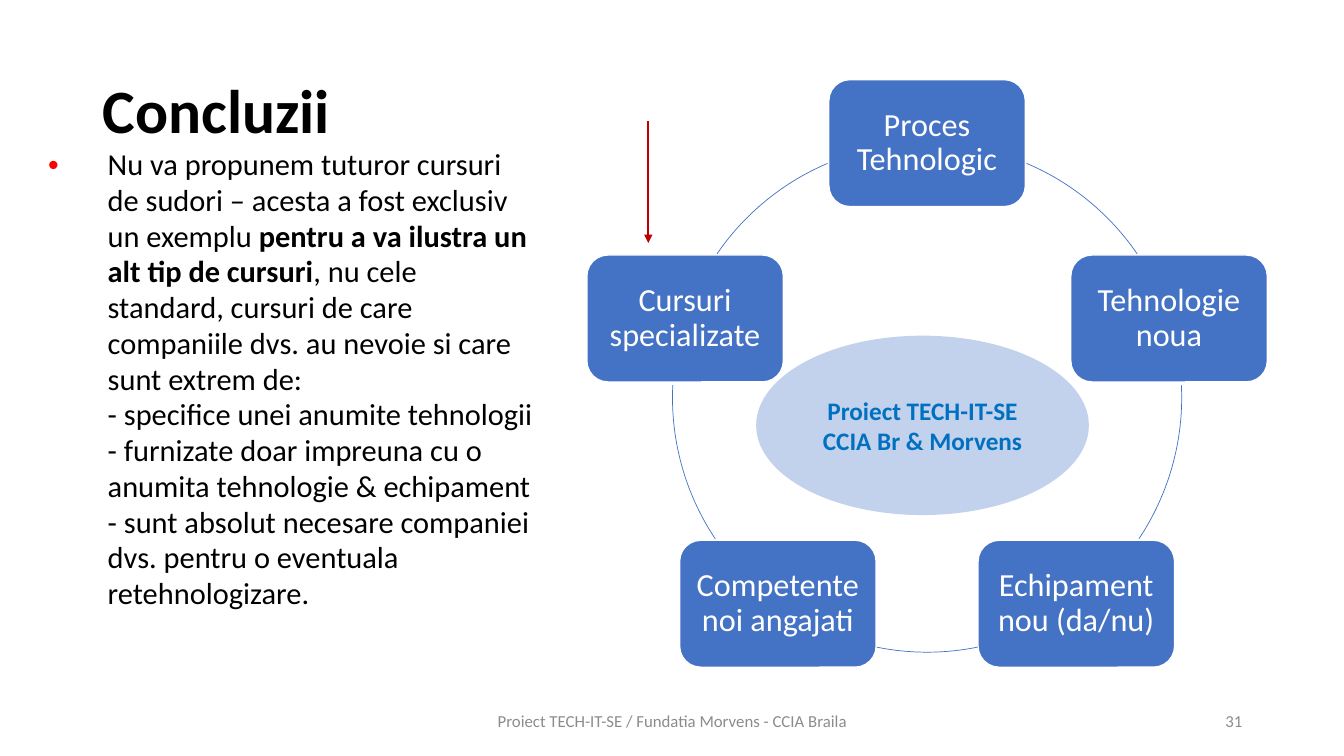
from math import cos, radians, sin

from lxml.etree import SubElement
from pptx import Presentation
from pptx.dml.color import RGBColor
from pptx.enum.shapes import MSO_CONNECTOR, MSO_SHAPE
from pptx.enum.text import MSO_ANCHOR, PP_ALIGN
from pptx.oxml.ns import qn
from pptx.util import Pt

PX = 9144
FONT = "Calibri"
BLACK = RGBColor(0x00, 0x00, 0x00)
WHITE = RGBColor(0xFF, 0xFF, 0xFF)
BLUE = RGBColor(0x44, 0x72, 0xC4)
PALE_BLUE = RGBColor(0xC2, 0xD1, 0xEC)
TEXT_BLUE = RGBColor(0x00, 0x70, 0xC0)
DARK_RED = RGBColor(0xC0, 0x00, 0x00)
GREY = RGBColor(0x8C, 0x8C, 0x8C)

WHEEL_LEFT, WHEEL_TOP, WHEEL_SIZE = 667, 142, 505
NODE_W, NODE_H = 195, 126
NODES = ["Proces Tehnologic", "Tehnologie noua", "Echipament nou (da/nu)",
         "Competente noi angajati", "Cursuri specializate"]
ARCS = [(293, 325.6), (357.2, 33.7), (78.5, 101.5), (146.3, 182.8), (214.4, 247)]
CONCLUSION = [
    ("Nu va propunem tuturor cursuri de sudori – acesta a fost exclusiv un exemplu ", False),
    ("pentru a va ilustra un alt tip de cursuri", True),
    (", nu cele standard, cursuri de care companiile dvs. au nevoie si care sunt extrem de:\n"
     "- specifice unei anumite tehnologii\n"
     "- furnizate doar impreuna cu o anumita tehnologie & echipament\n"
     "- sunt absolut necesare companiei dvs. pentru o eventuala retehnologizare.", False),
]


def px(*lengths):
    """Turn px lengths into EMU."""
    return [round(n * PX) for n in lengths]


def write(p, text, size=18, color=BLACK, bold=False, align=PP_ALIGN.LEFT, spacing=1.0):
    """Append formatted text to a paragraph, with a line break at each newline."""
    p.alignment = align
    p.line_spacing = spacing
    for i, line in enumerate(text.split("\n")):
        if i:
            p.add_line_break()
        r = p.add_run()
        r.text = line
        r.font.name = FONT
        r.font.size = Pt(size)
        r.font.bold = bold
        r.font.color.rgb = color


def add_text_box(s, left, top, width, height, anchor=MSO_ANCHOR.MIDDLE):
    """Add a wrapping text box and return its first paragraph."""
    tf = s.shapes.add_textbox(*px(left, top, width, height)).text_frame
    tf.word_wrap = True
    tf.vertical_anchor = anchor
    return tf.paragraphs[0]


def add_bullet(p, color, indent):
    """Give a paragraph a coloured hanging bullet."""
    pPr = p._p.get_or_add_pPr()
    margin, = px(indent)
    pPr.set("marL", str(margin))
    pPr.set("indent", str(-margin))
    SubElement(SubElement(pPr, qn("a:buClr")), qn("a:srgbClr"), val=str(color))
    SubElement(pPr, qn("a:buFont"), typeface="Arial")
    SubElement(pPr, qn("a:buChar"), char="•")


def add_filled(s, kind, left, top, width, height, fill):
    """Add a filled preset shape without outline or shadow."""
    sp = s.shapes.add_shape(kind, *px(left, top, width, height))
    sp.shadow.inherit = False
    sp.fill.solid()
    sp.fill.fore_color.rgb = fill
    sp.line.fill.background()
    sp.text_frame.word_wrap = True
    sp.text_frame.vertical_anchor = MSO_ANCHOR.MIDDLE
    return sp


def add_node(s, index, text):
    """Add one rounded node at its place on the wheel."""
    angle = radians(72 * index - 90)
    radius = WHEEL_SIZE / 2
    left = WHEEL_LEFT + radius * (1 + cos(angle)) - NODE_W / 2
    top = WHEEL_TOP + radius * (1 + sin(angle)) - NODE_H / 2
    sp = add_filled(s, MSO_SHAPE.ROUNDED_RECTANGLE, round(left), round(top),
                    NODE_W, NODE_H, BLUE)
    sp.line.color.rgb = WHITE
    sp.line.width = Pt(1)
    tf = sp.text_frame
    tf.margin_left, tf.margin_right = px(8, 8)
    write(tf.paragraphs[0], text, size=23, color=WHITE, align=PP_ALIGN.CENTER, spacing=0.9)


def add_arc(s, start, end):
    """Add a thin arc of the wheel between two clockwise angles in degrees."""
    sp = s.shapes.add_shape(MSO_SHAPE.ARC, *px(WHEEL_LEFT, WHEEL_TOP, WHEEL_SIZE, WHEEL_SIZE))
    sp.shadow.inherit = False
    sp.fill.background()
    sp.line.color.rgb = BLUE
    sp.line.width = Pt(0.5)
    for i, degrees in enumerate((start, end)):
        sp.adjustments[i] = degrees * 60000 / 100000


def add_arrow(s, x1, y1, x2, y2, color):
    """Add a straight arrow with a triangular head at its end."""
    line = s.shapes.add_connector(MSO_CONNECTOR.STRAIGHT, *px(x1, y1, x2, y2))
    line.line.color.rgb = color
    line.line.width = Pt(1.5)
    SubElement(line.line._get_or_add_ln(), qn("a:tailEnd"), type="triangle")
    SubElement(line._element.spPr, qn("a:effectLst"))


def main():
    """Build the slide and save it."""
    prs = Presentation()
    prs.slide_width, prs.slide_height = px(1333, 750)
    s = prs.slides.add_slide(prs.slide_layouts[6])

    write(add_text_box(s, 92, 40, 1150, 145), "Concluzii", size=44, bold=True, spacing=0.9)
    p = add_text_box(s, 38, 141, 504, 580, anchor=MSO_ANCHOR.TOP)
    add_bullet(p, RGBColor(0xFF, 0x00, 0x00), 59)
    for text, bold in CONCLUSION:
        write(p, text, size=21.7, bold=bold, spacing=0.98)

    for i, (text, arc) in enumerate(zip(NODES, ARCS)):
        add_node(s, i, text)
        add_arc(s, *arc)
    add_arrow(s, 643, 120, 643, 241, DARK_RED)

    tf = add_filled(s, MSO_SHAPE.OVAL, 750, 333, 330, 178, PALE_BLUE).text_frame
    for p, text in ((tf.paragraphs[0], "Proiect TECH-IT-SE"),
                    (tf.add_paragraph(), "CCIA Br & Morvens")):
        write(p, text, color=TEXT_BLUE, bold=True, align=PP_ALIGN.CENTER)

    write(add_text_box(s, 442, 695, 450, 40),
          "Proiect TECH-IT-SE / Fundatia Morvens - CCIA Braila",
          size=12, color=GREY, align=PP_ALIGN.CENTER)
    write(add_text_box(s, 942, 695, 300, 40), "31", size=12, color=GREY, align=PP_ALIGN.RIGHT)
    prs.save("out.pptx")


if __name__ == "__main__":
    main()
